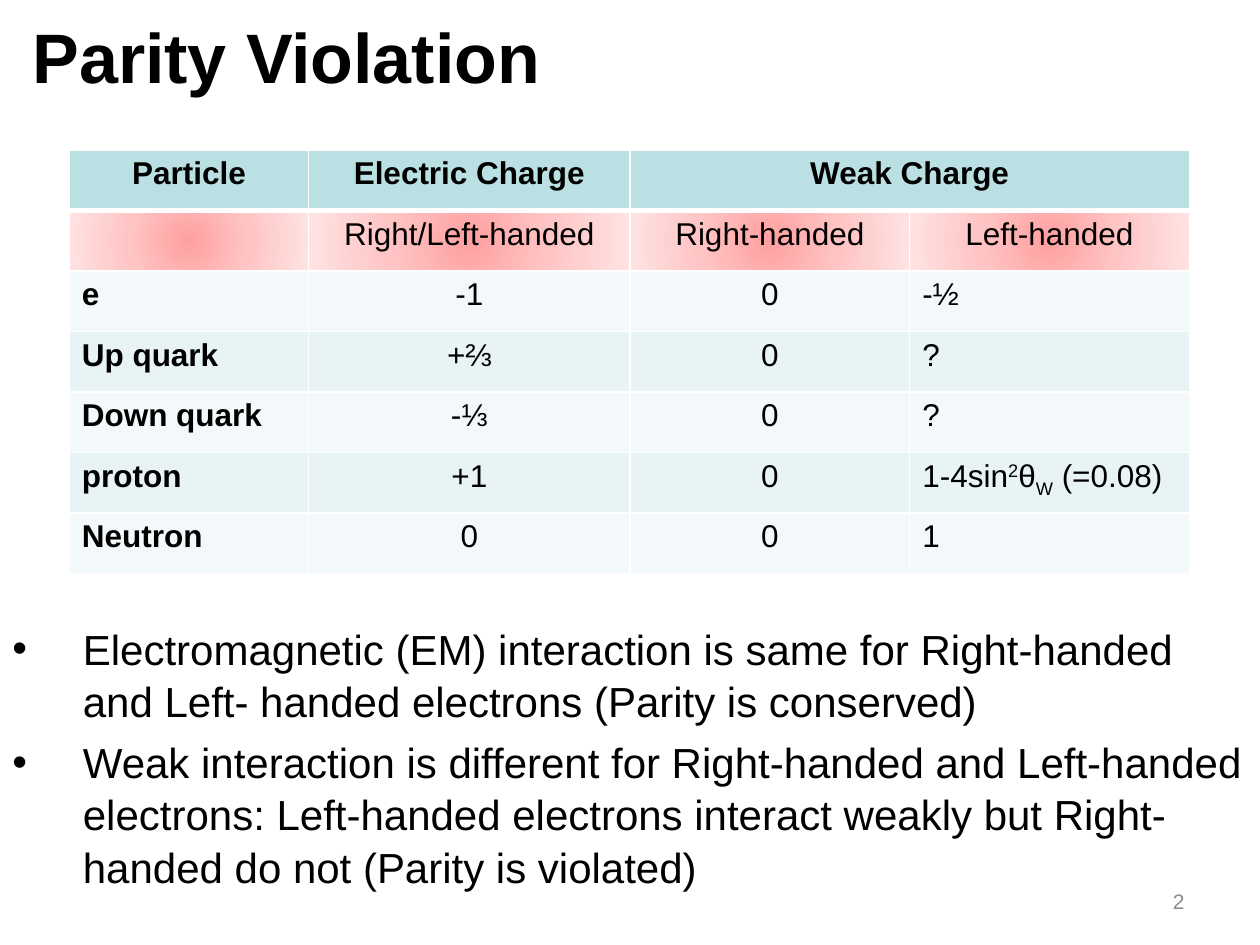
"""Build the Parity Violation slide with its charge table and two bullets."""
from lxml.etree import SubElement
from pptx import Presentation
from pptx.dml.color import RGBColor
from pptx.enum.text import MSO_ANCHOR as ANCHOR, PP_ALIGN as ALIGN
from pptx.oxml.ns import qn
from pptx.util import Inches, Pt

COLORS = {
    "text": "000000", "number": "8C8C8C", "border": "FFFFFF",
    "header": "BBE0E3", "light": "F3F9FA", "dark": "E7F3F4",
    "glow_in": "FFA0A0", "glow_mid": "FFC5C5", "glow_out": "FFE3E3",
}
GLOW = [(0, "glow_in"), (50000, "glow_mid"), (100000, "glow_out")]
COLUMNS = [1.9, 2.55, 2.22, 2.22]
ROW_HEIGHT = 0.48
WEAK_PROTON = [("1-4sin", 0), ("2", 30000), ("θ", 0), ("W", -25000), (" (=0.08)", 0)]
ROWS = [
    ["Particle", "Electric Charge", "Weak Charge", ""],
    ["", "Right/Left-handed", "Right-handed", "Left-handed"],
    ["e", "-1", "0", "-½"],
    ["Up quark", "+⅔", "0", "?"],
    ["Down quark", "-⅓", "0", "?"],
    ["proton", "+1", "0", WEAK_PROTON],
    ["Neutron", "0", "0", "1"],
]
BULLETS = [
    "Electromagnetic (EM) interaction is same for Right-handed "
    "and Left- handed electrons (Parity is conserved)",
    "Weak interaction is different for Right-handed and Left-handed electrons: "
    "Left-handed electrons interact weakly but Right-handed do not (Parity is violated)",
]


def add_run(p, text, size, bold=False, color="text", baseline=0):
    r = p.add_run()
    r.text = text
    r.font.name = "Arial"
    r.font.size = Pt(size)
    r.font.bold = bold
    r.font.color.rgb = RGBColor.from_string(COLORS[color])
    if baseline:
        r.font._element.set("baseline", str(baseline))


def add_text_box(slide, left, top, width, height, anchor=ANCHOR.MIDDLE):
    box = slide.shapes.add_textbox(Inches(left), Inches(top), Inches(width), Inches(height))
    tf = box.text_frame
    tf.word_wrap = True
    tf.vertical_anchor = anchor
    return tf


def add_bullets(slide):
    tf = add_text_box(slide, 0, 1.19, 10, 6.31, ANCHOR.TOP)
    tf.margin_top = Inches(3.74)
    for i, text in enumerate(BULLETS):
        p = tf.add_paragraph() if i else tf.paragraphs[0]
        p.space_before = Pt(4.8)
        p.line_spacing = 1.04
        pPr = p._p.get_or_add_pPr()
        pPr.set("marL", str(Inches(0.56)))
        pPr.set("indent", str(-Inches(0.56)))
        SubElement(pPr, qn("a:buFont"), typeface="Arial")
        SubElement(pPr, qn("a:buChar"), char="•")
        add_run(p, text, 24)


def set_borders(cell, bottom):
    tcPr = cell._tc.get_or_add_tcPr()
    for side, width in (("L", 1), ("R", 1), ("T", 1), ("B", bottom)):
        ln = SubElement(tcPr, qn(f"a:ln{side}"), w=str(Pt(width)))
        fill = SubElement(ln, qn("a:solidFill"))
        SubElement(fill, qn("a:srgbClr"), val=COLORS["border"])


def fill_radial(cell):
    grad = SubElement(cell._tc.get_or_add_tcPr(), qn("a:gradFill"), rotWithShape="1")
    stops = SubElement(grad, qn("a:gsLst"))
    for pos, color in GLOW:
        gs = SubElement(stops, qn("a:gs"), pos=str(pos))
        SubElement(gs, qn("a:srgbClr"), val=COLORS[color])
    shade = SubElement(grad, qn("a:path"), path="circle")
    SubElement(shade, qn("a:fillToRect"), l="50000", t="50000", r="50000", b="50000")


def fill_cell(cell, row):
    if row == 1:
        fill_radial(cell)
        return
    color = "header" if row == 0 else ("light", "dark")[row % 2]
    cell.fill.solid()
    cell.fill.fore_color.rgb = RGBColor.from_string(COLORS[color])


def add_charge_table(slide):
    frame = slide.shapes.add_table(
        len(ROWS), len(COLUMNS), Inches(0.55), Inches(1.19),
        Inches(sum(COLUMNS)), Inches(ROW_HEIGHT * len(ROWS)))
    table = frame.table
    for column, width in zip(table.columns, COLUMNS):
        column.width = Inches(width)
    for i, values in enumerate(ROWS):
        table.rows[i].height = Inches(ROW_HEIGHT)
        for j, value in enumerate(values):
            cell = table.cell(i, j)
            set_borders(cell, 1 if i else 3)
            fill_cell(cell, i)
            p = cell.text_frame.paragraphs[0]
            if i < 2 or j in (1, 2):
                p.alignment = ALIGN.CENTER
            parts = [(value, 0)] if isinstance(value, str) else value
            for text, baseline in parts:
                if text:
                    add_run(p, text, 18, bold=i == 0 or j == 0, baseline=baseline)
    table.cell(0, 2).merge(table.cell(0, 3))


def main():
    prs = Presentation()
    prs.slide_width, prs.slide_height = Inches(10), Inches(7.5)
    slide = prs.slides.add_slide(prs.slide_layouts[6])
    add_bullets(slide)
    title = add_text_box(slide, 0.16, 0, 9.09, 0.88)
    add_run(title.paragraphs[0], "Parity Violation", 40, bold=True)
    add_charge_table(slide)
    number = add_text_box(slide, 7.17, 6.95, 2.33, 0.4)
    number.paragraphs[0].alignment = ALIGN.RIGHT
    add_run(number.paragraphs[0], "2", 12, color="number")
    prs.save("out.pptx")


if __name__ == "__main__":
    main()
